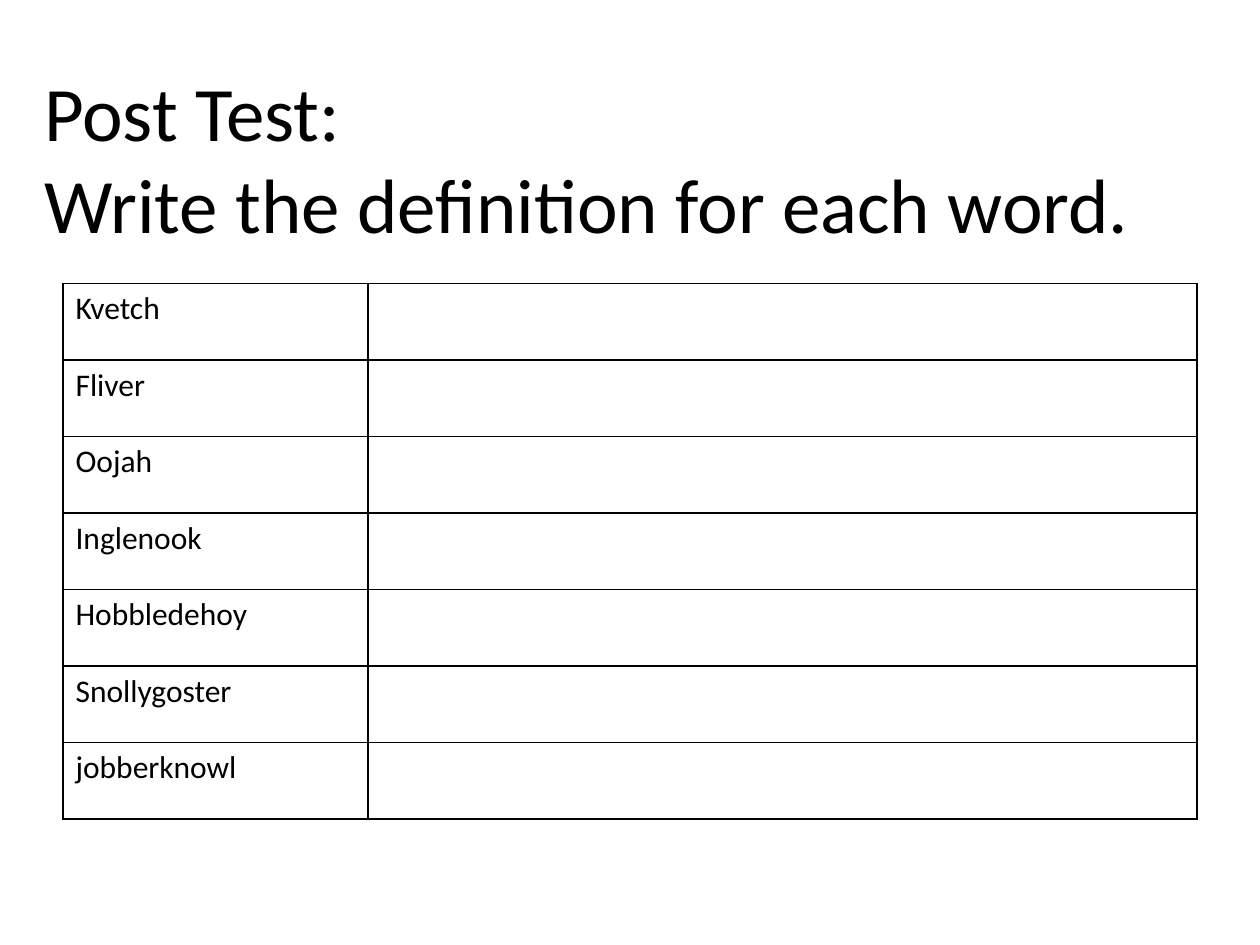
from lxml import etree
from pptx import Presentation
from pptx import util as u
from pptx.dml.color import RGBColor
from pptx.enum import text
from pptx.oxml.ns import qn

COLORS = {"ink": "000000"}
FONT = "Calibri"
WORDS = ["Kvetch", "Fliver", "Oojah", "Inglenook", "Hobbledehoy",
         "Snollygoster", "jobberknowl"]


def set_font(p, size):
    p.font.name = FONT
    p.font.size = u.Pt(size)
    p.font.color.rgb = RGBColor.from_string(COLORS["ink"])


def add_borders(cell, width):
    tcPr = cell._tc.get_or_add_tcPr()
    for i, side in enumerate(("lnL", "lnR", "lnT", "lnB")):
        ln = etree.Element(qn(f"a:{side}"), w=str(u.Pt(width)))
        fill = etree.SubElement(ln, qn("a:solidFill"))
        etree.SubElement(fill, qn("a:srgbClr"), val=COLORS["ink"])
        tcPr.insert(i, ln)


prs = Presentation()
prs.slide_width, prs.slide_height = u.Inches(10), u.Inches(7.5)
s = prs.slides.add_slide(prs.slide_layouts[5])

# Title
title = s.shapes.title
title.left, title.top = u.Inches(0.25), u.Inches(0.33)
title.width, title.height = u.Inches(9.33), u.Inches(1.83)
tf = title.text_frame
tf.word_wrap = True
tf.vertical_anchor = text.MSO_ANCHOR.MIDDLE
tf.text = "Post Test: \vWrite the definition for each word."
p = tf.paragraphs[0]
p.alignment = text.PP_ALIGN.LEFT
set_font(p, 44)

# Table: one word per row, with space for its definition
table = s.shapes.add_table(len(WORDS), 2, u.Inches(0.5), u.Inches(2.25),
                           u.Inches(9), u.Inches(4.25)).table
table.first_row = table.horz_banding = False
table.columns[0].width = u.Inches(2.42)
table.columns[1].width = u.Inches(6.58)
for row, word in zip(table.rows, WORDS):
    row.cells[0].text = word
    for cell in row.cells:
        cell.fill.background()
        add_borders(cell, 1)
        set_font(cell.text_frame.paragraphs[0], 18)

prs.save("out.pptx")
